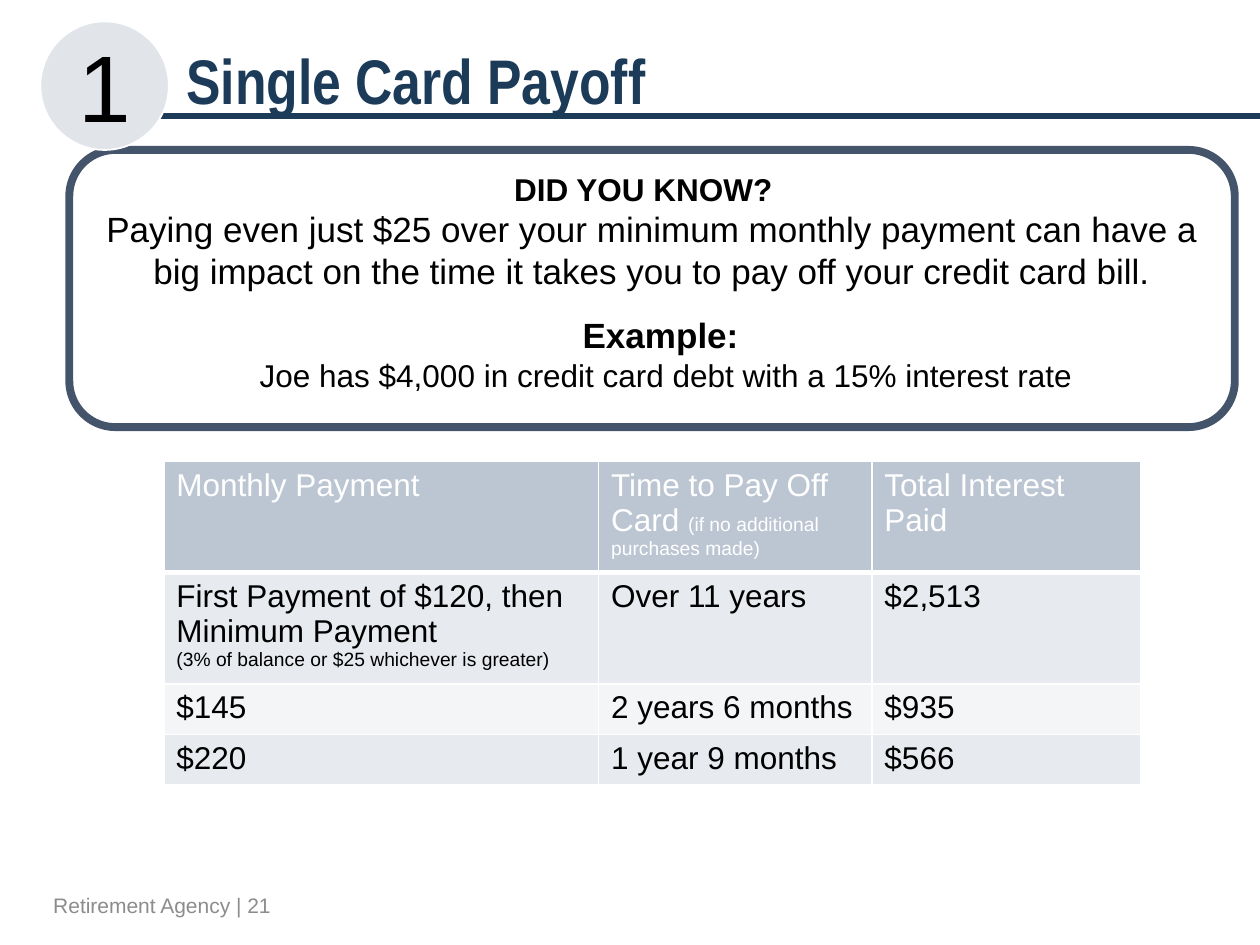
from dataclasses import dataclass
from typing import NamedTuple

from lxml.etree import SubElement
from pptx import Presentation
from pptx.dml.color import RGBColor
from pptx.enum.shapes import MSO_CONNECTOR, MSO_SHAPE
from pptx.enum.text import MSO_ANCHOR, MSO_AUTO_SIZE, PP_ALIGN
from pptx.oxml.ns import qn
from pptx.util import Inches, Pt


@dataclass(frozen=True)
class Theme:
    font: str = "Arial"
    title_font: str = "Arial Narrow"
    navy: str = "1B3B59"
    slate: str = "44546A"
    black: str = "000000"
    white: str = "FFFFFF"
    grey: str = "8C8C8C"
    badge: str = "E1E5EA"
    header: str = "BCC6D3"
    bands: tuple = ("E7EAEF", "F3F5F7")
    number: int = 54
    title: int = 36
    large: int = 20
    body: int = 18
    footer: int = 12
    note: int = 11


class Span(NamedTuple):
    text: str
    size: int
    bold: bool = False
    breaks: bool = False


THEME = Theme()
HEADER = [
    [Span("Monthly Payment", THEME.body)],
    [Span("Time to Pay Off Card ", THEME.body),
     Span("(if no additional purchases made)", THEME.note)],
    [Span("Total Interest Paid", THEME.body)],
]
PLANS = [
    [[Span("First Payment of $120, then Minimum Payment ", THEME.body, breaks=True),
      Span("(3% of balance or $25 whichever is greater)", THEME.note)],
     [Span("Over 11 years", THEME.body)],
     [Span("$2,513", THEME.body)]],
    *[[[Span(text, THEME.body)] for text in row] for row in (
        ("$145", "2 years 6 months", "$935"),
        ("$220", "1 year 9 months", "$566"))],
]
COLUMN_WIDTHS = (3.45, 2.17, 2.13)
ROW_HEIGHTS = (0.75, 0.35, 0.35, 0.35)


def rgb(value: str) -> RGBColor:
    return RGBColor.from_string(value)


def inches(*values: float) -> list:
    return [Inches(value) for value in values]


def write(frame, *lines: list[Span], color: str = THEME.black, font: str = THEME.font,
          align=PP_ALIGN.LEFT, anchor=MSO_ANCHOR.TOP, wrap: bool = True) -> None:
    """Fill a text frame with one paragraph per list of spans."""
    frame.word_wrap = wrap
    frame.vertical_anchor = anchor
    for index, spans in enumerate(lines):
        para = frame.add_paragraph() if index else frame.paragraphs[0]
        para.alignment = align
        for span in spans:
            run = para.add_run()
            run.text = span.text
            run.font.name = font
            run.font.size = Pt(span.size)
            run.font.bold = span.bold
            run.font.color.rgb = rgb(color)
            if span.breaks:
                para.add_line_break()


def add_text(shapes, at: tuple, *lines: list[Span], **text_format) -> None:
    write(shapes.add_textbox(*inches(*at)).text_frame, *lines, **text_format)


def add_panel(shapes, preset, at: tuple, line: str, width: float, fill: str | None = None):
    panel = shapes.add_shape(preset, *inches(*at))
    panel.shadow.inherit = False
    if fill:
        panel.fill.solid()
        panel.fill.fore_color.rgb = rgb(fill)
    else:
        panel.fill.background()
    panel.line.color.rgb = rgb(line)
    panel.line.width = Pt(width)
    return panel


def add_title(page) -> None:
    rule = page.shapes.add_connector(MSO_CONNECTOR.STRAIGHT, *inches(0.69, 0.92, 10, 0.92))
    rule.line.color.rgb = rgb(THEME.navy)
    rule.line.width = Pt(3)
    SubElement(rule.element.spPr, qn("a:effectLst"))
    title = page.shapes.title
    title.left, title.top, title.width, title.height = inches(1.38, 0.29, 8.62, 0.68)
    title.text_frame.auto_size = MSO_AUTO_SIZE.NONE
    write(title.text_frame, [Span("Single Card Payoff", THEME.title, True)],
          color=THEME.navy, font=THEME.title_font, anchor=MSO_ANCHOR.MIDDLE)


def add_fact(page) -> None:
    panel = add_panel(page.shapes, MSO_SHAPE.ROUNDED_RECTANGLE, (0.55, 1.19, 9.25, 2.2),
                      THEME.slate, 4.5)
    write(panel.text_frame,
          [Span("DID YOU KNOW?  ", THEME.body, True)],
          [Span("Paying even just $25 over your minimum monthly payment can have a big "
                "impact on the time it takes you to pay off your credit card bill.",
                THEME.large)],
          align=PP_ALIGN.CENTER)
    add_text(page.shapes, (1.73, 2.44, 7.18, 1.14),
             [Span("Example:  ", THEME.large, True)],
             [Span("Joe has $4,000 in credit card debt with a 15% interest rate ", THEME.body)],
             align=PP_ALIGN.CENTER)


def format_cell(cell, spans: list[Span], fill: str, color: str, top: int, bottom: int) -> None:
    """Write and fill a cell; top and bottom are border widths in points."""
    write(cell.text_frame, spans, color=color)
    properties = cell._tc.get_or_add_tcPr()
    for side, width in (("L", 1), ("R", 1), ("T", top), ("B", bottom)):
        border = SubElement(properties, qn(f"a:ln{side}"), w=str(Pt(width)))
        solid = SubElement(border, qn("a:solidFill"))
        SubElement(solid, qn("a:srgbClr"), val=THEME.white)
    cell.fill.solid()
    cell.fill.fore_color.rgb = rgb(fill)


def add_payment_table(page) -> None:
    rows = [HEADER, *PLANS]
    table = page.shapes.add_table(
        len(rows), len(COLUMN_WIDTHS),
        *inches(1.3, 3.66, sum(COLUMN_WIDTHS), sum(ROW_HEIGHTS))).table
    for column, width in zip(table.columns, COLUMN_WIDTHS):
        column.width = Inches(width)
    for row_index, (row, height) in enumerate(zip(rows, ROW_HEIGHTS)):
        table.rows[row_index].height = Inches(height)
        is_header = row_index == 0
        fill = THEME.header if is_header else THEME.bands[(row_index - 1) % 2]
        for column_index, spans in enumerate(row):
            format_cell(table.cell(row_index, column_index), spans, fill,
                        THEME.white if is_header else THEME.black,
                        top=3 if row_index == 1 else 1, bottom=3 if is_header else 1)


def add_badge(page) -> None:
    badge = page.shapes.add_group_shape()
    add_panel(badge.shapes, MSO_SHAPE.OVAL, (0.32, 0.17, 1.02, 1.02),
              THEME.white, 1, THEME.badge)
    add_text(badge.shapes, (0.52, 0.17, 0.62, 1.01), [Span("1", THEME.number)],
             align=PP_ALIGN.CENTER, wrap=False)


def main() -> None:
    deck = Presentation()
    deck.slide_width, deck.slide_height = inches(10, 7.5)
    page = deck.slides.add_slide(deck.slide_layouts.get_by_name("Title Only"))
    add_title(page)
    add_fact(page)
    add_text(page.shapes, (0, 6.98, 2.25, 0.4), [Span("Retirement Agency | 21", THEME.footer)],
             color=THEME.grey, align=PP_ALIGN.RIGHT, anchor=MSO_ANCHOR.MIDDLE)
    add_payment_table(page)
    add_badge(page)
    deck.save("out.pptx")


if __name__ == "__main__":
    main()
